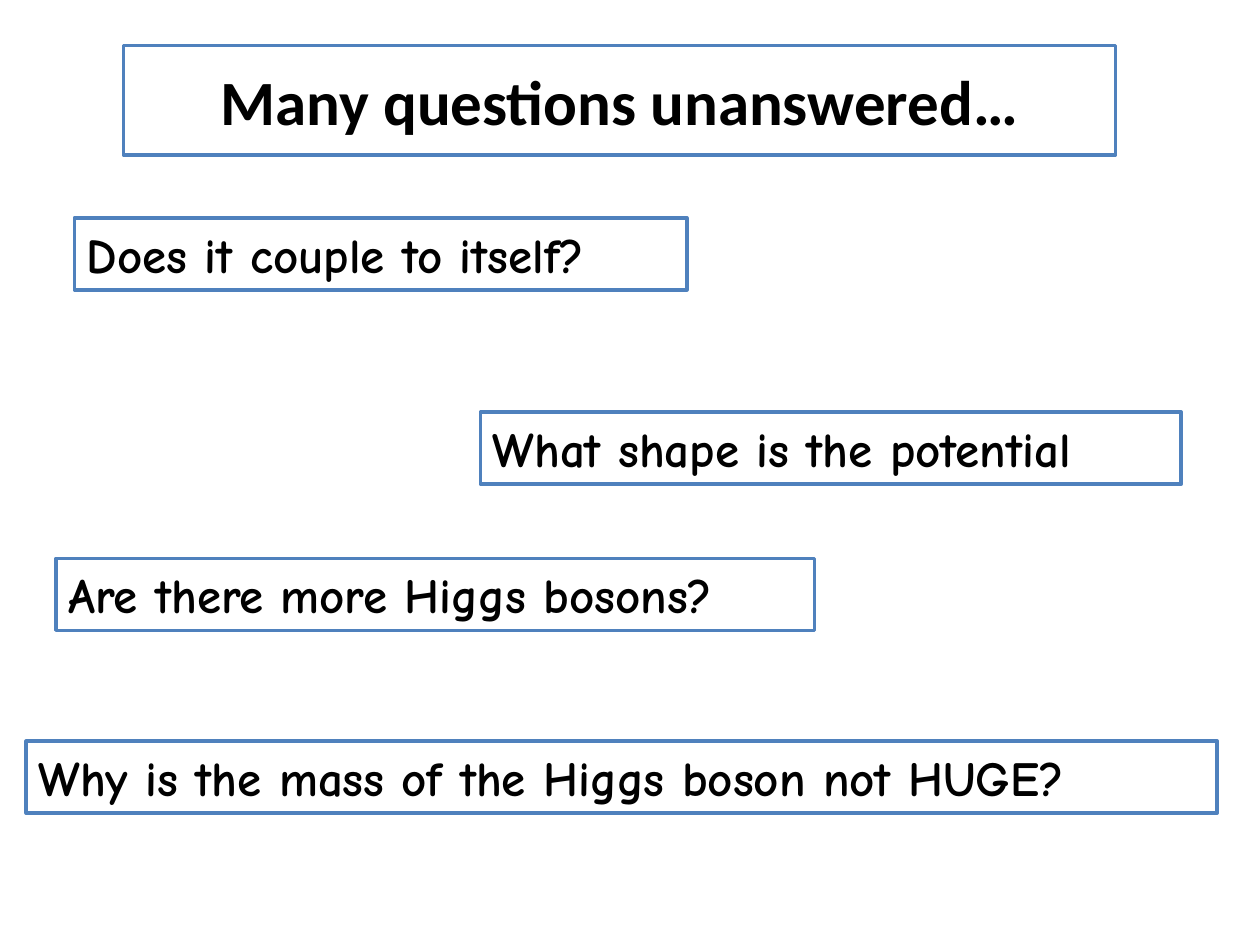
from dataclasses import dataclass

from pptx import Presentation
from pptx.dml.color import RGBColor
from pptx.enum.text import MSO_ANCHOR as Anchor, MSO_AUTO_SIZE as AutoSize, PP_ALIGN as Align
from pptx.util import Pt

BLACK, WHITE, BLUE = "000000", "FFFFFF", "4F81BD"
QUESTION_HEIGHT = 41.2


@dataclass
class Question:
    text: str
    left: float
    top: float
    width: float


QUESTIONS = [
    Question("Does it couple to itself?", 42.5, 124.5, 350),
    Question("What shape is the potential", 274.5, 235.5, 400.5),
    Question("Are there more Higgs bosons?", 32, 319, 433.5),
    Question("Why is the mass of the Higgs boson not HUGE?", 15, 423.5, 680.5),
]


def rgb(value: str) -> RGBColor:
    return RGBColor.from_string(value)


def frame(box) -> None:
    """Give a box its white fill and blue outline."""
    box.fill.solid()
    box.fill.fore_color.rgb = rgb(WHITE)
    box.line.color.rgb = rgb(BLUE)
    box.line.width = Pt(2)


def write(box, text: str, *, font: str, size: float, align=Align.LEFT,
          anchor=Anchor.TOP) -> None:
    body = box.text_frame
    body.word_wrap = True
    body.auto_size = AutoSize.NONE
    body.vertical_anchor = anchor
    paragraph = body.paragraphs[0]
    paragraph.alignment = align
    run = paragraph.add_run()
    run.text = text
    run.font.name = font
    run.font.size = Pt(size)
    run.font.bold = True
    run.font.color.rgb = rgb(BLACK)


def draw_question(slide, question: Question) -> None:
    box = slide.shapes.add_textbox(Pt(question.left), Pt(question.top),
                                   Pt(question.width), Pt(QUESTION_HEIGHT))
    frame(box)
    write(box, question.text, font="Comic Neue", size=28)


def main() -> None:
    deck = Presentation()
    deck.slide_width, deck.slide_height = Pt(720), Pt(540)
    slide = deck.slides.add_slide(deck.slide_layouts[5])

    # Framed heading
    heading = slide.shapes.title
    heading.left, heading.top = Pt(70.5), Pt(26)
    heading.width, heading.height = Pt(567), Pt(62.6)
    frame(heading)
    write(heading, "Many questions unanswered…", font="Calibri", size=36,
          align=Align.CENTER, anchor=Anchor.MIDDLE)

    # Open questions
    for question in QUESTIONS:
        draw_question(slide, question)

    deck.save("out.pptx")


if __name__ == "__main__":
    main()
